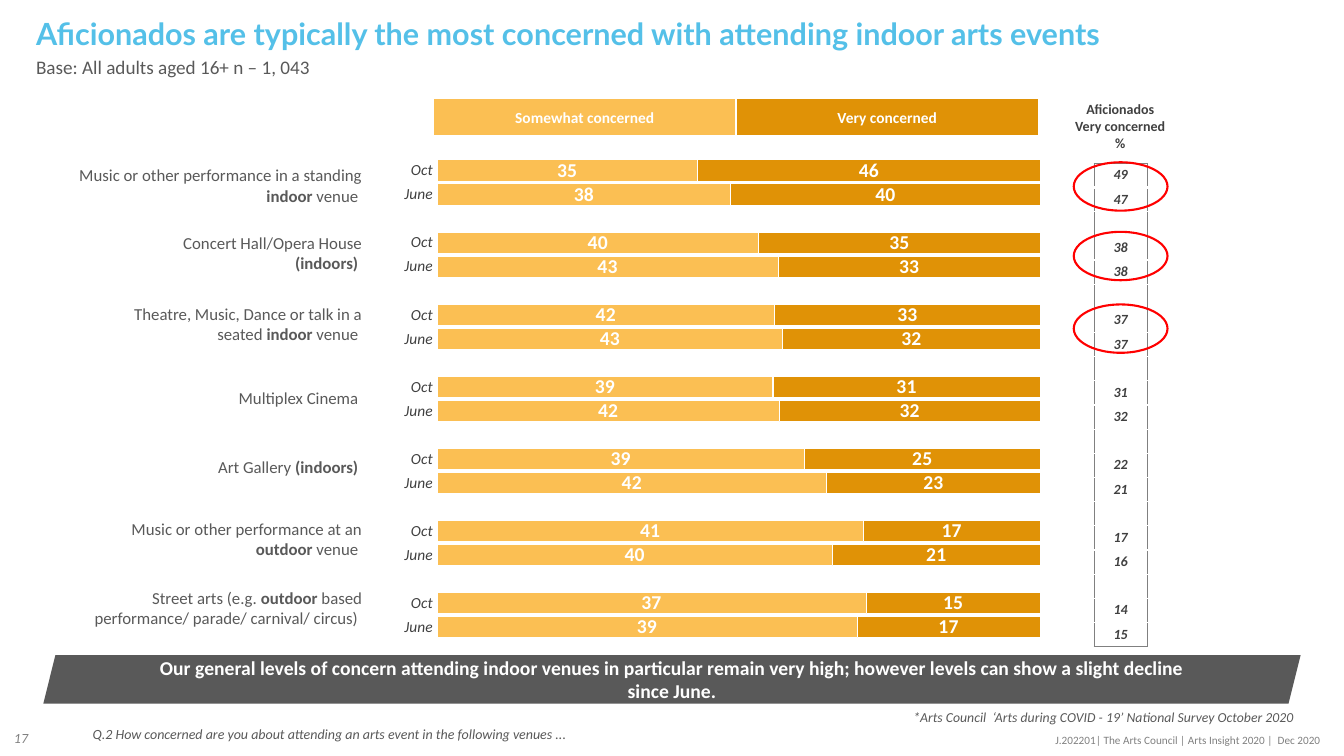
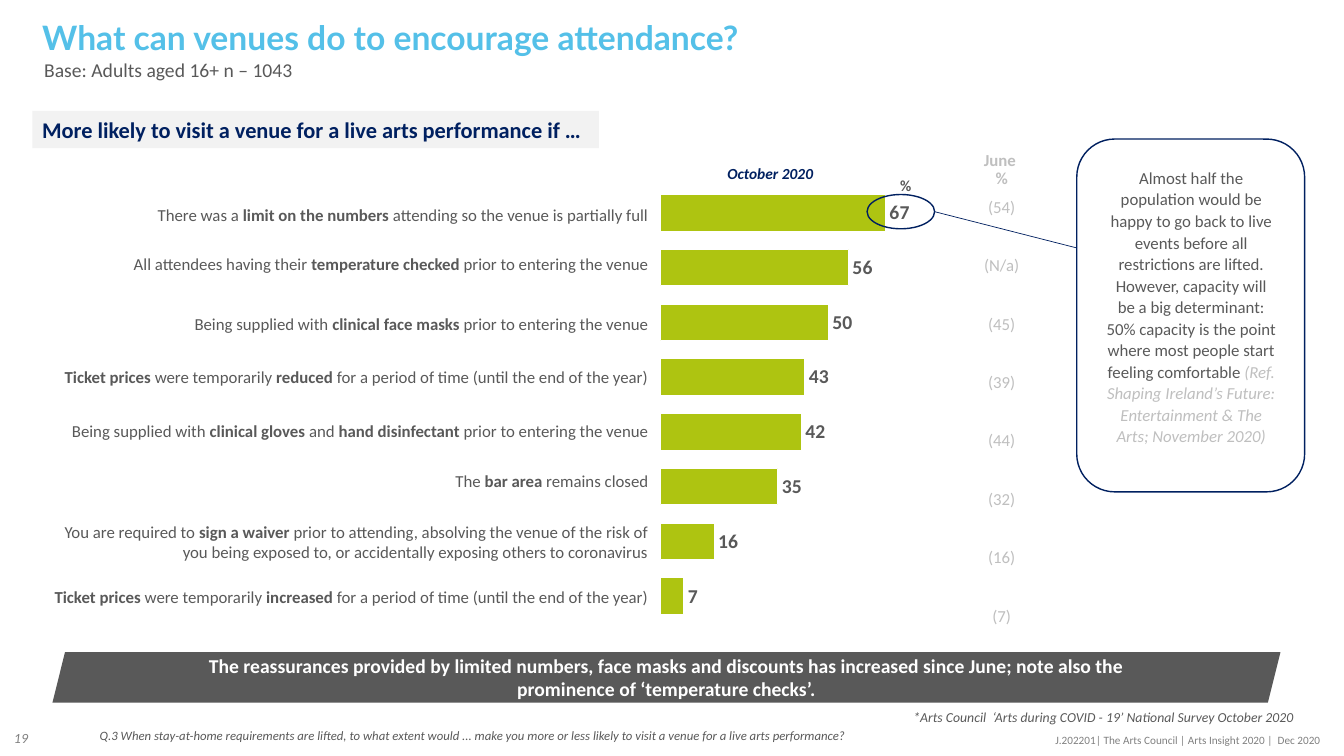
from dataclasses import dataclass

import pptx
import pptx.chart.data
import pptx.dml.color
import pptx.enum.chart
import pptx.enum.shapes
import pptx.enum.text
import pptx.oxml
import pptx.oxml.ns
import pptx.util
from lxml import etree

Inches, Pt = pptx.util.Inches, pptx.util.Pt
RGB = pptx.dml.color.RGBColor.from_string
ALIGN = pptx.enum.text.PP_ALIGN
ANCHOR = pptx.enum.text.MSO_ANCHOR
SHAPE = pptx.enum.shapes.MSO_SHAPE
CHART = pptx.enum.chart
qn = pptx.oxml.ns.qn


@dataclass(frozen=True)
class Theme:
    title_font: str = "Lato"
    body_font: str = "Calibri"
    title: str = "54C0E8"
    body: str = "595959"
    dark: str = "404040"
    muted: str = "808080"
    faint: str = "BFBFBF"
    white: str = "FFFFFF"
    panel: str = "F2F2F2"
    navy: str = "002060"
    red: str = "FF0000"
    light_amber: str = "FBBF53"
    amber: str = "E09206"
    green: str = "AEC411"
    heading_size: float = 16
    strong_size: float = 14
    text_size: float = 12
    label_size: float = 11
    small_size: float = 10
    source_size: float = 9.8
    credit_size: float = 8


THEME = Theme()


def write_text(frame, text, size, color=THEME.body, bold=False, italic=False, align=ALIGN.LEFT,
               spacing=None, font=THEME.body_font, marked_color=None, marked_italic=False):
    """Write one paragraph per line; parts between ** are bold, or take the marked colour and italics."""
    for number, line in enumerate(text.split("\n")):
        paragraph = frame.paragraphs[0] if number == 0 else frame.add_paragraph()
        paragraph.alignment = align
        if spacing:
            paragraph.line_spacing = spacing
        for position, part in enumerate(line.split("**")):
            if not part:
                continue
            marked = position % 2 == 1
            run = paragraph.add_run()
            run.text = part
            run.font.name = font
            run.font.size = Pt(size)
            run.font.bold = bold or (marked and not marked_color)
            run.font.italic = italic or (marked and marked_italic)
            run.font.color.rgb = RGB(marked_color if marked and marked_color else color)
        if not line:
            etree.SubElement(paragraph._p, qn("a:endParaRPr"), sz=str(int(size * 100)))


def add_box(slide, box, text="", size=THEME.text_size, geometry=None, fill=None, line=None,
            line_width=1, anchor=ANCHOR.TOP, inset=None, **style):
    """Add a text box, or a preset shape when a geometry is given."""
    place = [Inches(length) for length in box]
    if geometry is None:
        shape = slide.shapes.add_textbox(*place)
    else:
        shape = slide.shapes.add_shape(geometry, *place)
        shape.shadow.inherit = False
        if fill:
            shape.fill.solid()
            shape.fill.fore_color.rgb = RGB(fill)
        else:
            shape.fill.background()
        if line:
            shape.line.color.rgb = RGB(line)
            shape.line.width = Pt(line_width)
        else:
            shape.line.fill.background()
    frame = shape.text_frame
    frame.word_wrap = True
    frame.vertical_anchor = anchor
    if inset is not None:
        frame.margin_left = frame.margin_top = frame.margin_right = frame.margin_bottom = Inches(inset)
    if text:
        write_text(frame, text, size, **style)


presentation = pptx.Presentation()
presentation.slide_width, presentation.slide_height = Inches(13.33), Inches(7.5)

# Titles, bands and footers
pages = [
    dict(number="17",
         title="Aficionados are typically the most concerned with attending indoor arts events",
         title_box=(0.26, 0.14, 11.58, 0.41), title_size=21.8,
         base="Base: All adults aged 16+ n – 1, 043", base_box=(0.26, 0.53, 5.94, 0.35), base_size=13.7,
         question="Q.2 How concerned are you about attending an arts event in the following venues ...",
         question_box=(0.82, 7.17, 5.97, 0.31), question_size=10,
         band="Our general levels of concern attending indoor venues in particular remain very high; "
              "however levels can show a slight decline since June.",
         band_box=(0.43, 6.5, 12.47, 0.48)),
    dict(number="19",
         title="What can venues do to encourage attendance?",
         title_box=(0.32, 0.16, 8.51, 0.41), title_size=24,
         base="Base: Adults aged 16+ n – 1043", base_box=(0.34, 0.55, 5.94, 0.35), base_size=14,
         question="Q.3 When stay-at-home requirements are lifted, to what extent would ... "
                  "make you more or less likely to visit a venue for a live arts performance?",
         question_box=(0.89, 7.19, 7.71, 0.27), question_size=9.1,
         band="The reassurances provided by limited numbers, face masks and discounts has increased "
              "since June; note also the prominence of ‘temperature checks’.",
         band_box=(0.52, 6.47, 12.18, 0.5)),
]
for page in pages:
    slide = presentation.slides.add_slide(presentation.slide_layouts[6])
    add_box(slide, (0.04, 7.12, 0.58, 0.4), page["number"], THEME.small_size, color=THEME.muted,
            italic=True, anchor=ANCHOR.MIDDLE)
    add_box(slide, (10.3, 7.23, 2.9, 0.37), "J.202201| The Arts Council | Arts Insight 2020 |  Dec 2020",
            THEME.credit_size, color=THEME.muted, align=ALIGN.RIGHT)
    add_box(slide, page["title_box"], page["title"], page["title_size"], color=THEME.title, bold=True,
            font=THEME.title_font, spacing=0.9)
    add_box(slide, page["base_box"], page["base"], page["base_size"], spacing=0.9)
    add_box(slide, page["question_box"], page["question"], page["question_size"], italic=True, spacing=0.9)
    add_box(slide, page["band_box"], page["band"], THEME.strong_size, geometry=SHAPE.PARALLELOGRAM,
            fill=THEME.body, color=THEME.white, bold=True, align=ALIGN.CENTER, anchor=ANCHOR.MIDDLE, inset=0)
    add_box(slide, (8.96, 7, 4.17, 0.2),
            "*Arts Council  ‘Arts during COVID - 19’ National Survey October 2020",
            THEME.source_size, italic=True, spacing=0.9)
concern_slide, venue_slide = presentation.slides

# Charts
charts = [
    dict(slide=concern_slide, box=(3.81, 1.47, 6.64, 4.97), layout=(0.079, 0.021, 0.901, 0.959),
         kind=CHART.XL_CHART_TYPE.BAR_STACKED_100, gap=12, overlap=100, maximum=None,
         categories=(["Oct", "June", ""] * 7)[:-1], show_categories=True,
         label_color=THEME.white, label_position=CHART.XL_LABEL_POSITION.CENTER,
         series=[(THEME.light_amber, [35, 38, None, 40, 43, None, 42, 43, None, 39, 42, None,
                                      39, 42, None, 41, 40, None, 37, 39]),
                 (THEME.amber, [46, 40, None, 35, 33, None, 33, 32, None, 31, 32, None,
                                25, 23, None, 17, 21, None, 15, 17])]),
    dict(slide=venue_slide, box=(4.86, 1.6, 4.41, 4.62), layout=(0.383, 0.052, 0.605, 0.941),
         kind=CHART.XL_CHART_TYPE.BAR_CLUSTERED, gap=50, overlap=0, maximum=80,
         categories=[str(number) for number in range(1, 9)], show_categories=False,
         label_color=THEME.body, label_position=CHART.XL_LABEL_POSITION.OUTSIDE_END,
         series=[(THEME.green, [67, 56, 50, 43, 42, 35, 16, 7])]),
]
for item in charts:
    data = pptx.chart.data.CategoryChartData(number_format="0")
    data.categories = item["categories"]
    for number, (color, values) in enumerate(item["series"], 1):
        data.add_series(f"Series {number}", values)
    chart = item["slide"].shapes.add_chart(
        item["kind"], *[Inches(length) for length in item["box"]], data).chart
    chart.has_title = chart.has_legend = False
    chart.font.name = THEME.body_font
    chart.font.size = Pt(THEME.label_size)
    chart.font.color.rgb = RGB(THEME.dark)

    category_axis, value_axis = chart.category_axis, chart.value_axis
    category_axis.reverse_order = True
    category_axis.visible = item["show_categories"]
    category_axis.major_tick_mark = CHART.XL_TICK_MARK.NONE
    category_axis.format.line.fill.background()
    category_axis.tick_labels.font.italic = True
    value_axis.visible = value_axis.has_major_gridlines = False
    value_axis.minimum_scale = 0
    if item["maximum"]:
        value_axis.maximum_scale = item["maximum"]

    plot = chart.plots[0]
    plot.gap_width, plot.overlap = item["gap"], item["overlap"]
    plot.vary_by_categories = False
    for series, (color, values) in zip(plot.series, item["series"]):
        series.format.fill.solid()
        series.format.fill.fore_color.rgb = RGB(color)
        series.format.line.color.rgb = RGB(THEME.white)
        series.format.line.width = Pt(0.75)
        labels = series.data_labels
        labels.show_value = True
        labels.number_format, labels.number_format_is_linked = "0", False
        labels.position = item["label_position"]
        labels.font.name = THEME.body_font
        labels.font.size = Pt(THEME.strong_size)
        labels.font.bold = True
        labels.font.color.rgb = RGB(item["label_color"])

    plot_area = chart._chartSpace.chart.plotArea
    for old_layout in plot_area.findall(qn("c:layout")):
        plot_area.remove(old_layout)
    layout = etree.Element(qn("c:layout"))
    manual = etree.SubElement(layout, qn("c:manualLayout"))
    settings = [("layoutTarget", "inner"), ("xMode", "edge"), ("yMode", "edge"),
                *zip("xywh", item["layout"])]
    for name, value in settings:
        etree.SubElement(manual, qn(f"c:{name}"), val=str(value))
    plot_area.insert(0, layout)

# Tables
white_edge, gray_edge = (THEME.white, 1), (THEME.muted, 0.5)
june_shares = ["(54)", "(N/a)", "(45)", "(39)", "(44)", "(32)", "(16)", "(7)"]
aficionado_pairs = [(49, 47), (38, 38), (37, 37), (31, 32), (22, 21), (17, 16), (14, 15)]
aficionado_rows = "||".join(f"{october}|{june}" for october, june in aficionado_pairs).split("|")
measures = [
    "There was a **limit on the numbers **attending so the venue is partially full",
    "All attendees having their **temperature checked **prior to entering the venue",
    "Being supplied with **clinical face masks **prior to entering the venue",
    "**Ticket prices **were temporarily **reduced** for a period of time (until the end of the year)",
    "Being supplied with **clinical gloves **and **hand disinfectant** prior to entering the venue",
    "The **bar area **remains closed",
    "You are required to **sign a waiver **prior to attending, absolving the venue of the risk of "
    "you being exposed to, or accidentally exposing others to coronavirus",
    "**Ticket prices **were temporarily **increased** for a period of time (until the end of the year)",
]
centered = dict(align=ALIGN.CENTER)
tables = [
    dict(slide=concern_slide, corner=(4.3, 0.98), columns=[3, 3], heights=[0.37],
         rows=[["Somewhat concerned", "Very concerned"]], fills=[THEME.light_amber, THEME.amber],
         edge=white_edge, size=THEME.label_size, style=dict(centered, color=THEME.white, bold=True)),
    dict(slide=concern_slide, corner=(10.85, 1.62), columns=[0.53], heights=[0.24] * 20,
         rows=[[value] for value in aficionado_rows], edge=gray_edge, size=THEME.small_size,
         style=dict(centered, color=THEME.dark, bold=True, italic=True, spacing=0.8)),
    dict(slide=venue_slide, corner=(9.53, 1.45), columns=[0.81], heights=[0.46] + [0.29] * 15,
         rows=[["**June **\n**%**"]] + [[value] for value in "||".join(june_shares).split("|")],
         edge=white_edge, size=THEME.text_size, style=dict(centered, color=THEME.faint, spacing=0.9)),
    dict(slide=venue_slide, corner=(8.67, 1.74), columns=[0.03, 0.51], heights=[0.18],
         rows=[["", "%"]], edge=None, size=THEME.label_size, style=dict(centered, bold=True)),
    dict(slide=venue_slide, corner=(0.5, 2.03), columns=[5.94],
         heights=[0.49, 0.59, 0.53, 0.53, 0.5, 0.5, 0.65, 0.6], rows=[[text] for text in measures],
         edge=None, size=THEME.text_size, anchor=ANCHOR.TOP, style=dict(align=ALIGN.RIGHT)),
]
for item in tables:
    columns, heights, edge = item["columns"], item["heights"], item["edge"]
    place = [Inches(length) for length in (*item["corner"], sum(columns), sum(heights))]
    table = item["slide"].shapes.add_table(len(heights), len(columns), *place).table
    table.first_row = table.horz_banding = False
    for column, width in zip(table.columns, columns):
        column.width = Inches(width)
    for row_number, (row, height) in enumerate(zip(table.rows, heights)):
        row.height = Inches(height)
        first, last = row_number == 0, row_number == len(heights) - 1
        top = edge if first or not edge else white_edge
        bottom = edge if last or not edge else (THEME.white, 3 if first else 1)
        for column_number, cell in enumerate(row.cells):
            cell.margin_left = cell.margin_right = cell.margin_top = Inches(0.01)
            cell.margin_bottom = 0
            cell.vertical_anchor = item.get("anchor", ANCHOR.MIDDLE)
            write_text(cell.text_frame, item["rows"][row_number][column_number], item["size"], **item["style"])
            properties = cell._tc.get_or_add_tcPr()
            for side, border in zip("LRTB", (edge, edge, top, bottom)):
                border_line = etree.SubElement(properties, qn(f"a:ln{side}"))
                if border:
                    border_line.set("w", str(Pt(border[1])))
                    solid = etree.SubElement(border_line, qn("a:solidFill"))
                    etree.SubElement(solid, qn("a:srgbClr"), val=border[0])
                else:
                    etree.SubElement(border_line, qn("a:noFill"))
            if "fills" in item:
                cell.fill.solid()
                cell.fill.fore_color.rgb = RGB(item["fills"][column_number])
            else:
                cell.fill.background()

# Concern slide: venue labels and highlights
venue_labels = [
    (0.43, 1.59, "Music or other performance in a standing **indoor** venue "),
    (1.23, 2.26, "Concert Hall/Opera House **(indoors) **"),
    (0.99, 2.96, "Theatre, Music, Dance or talk in a seated **indoor** venue "),
    (0.87, 3.8, "Multiplex Cinema "),
    (1.11, 4.48, "Art Gallery **(indoors) **"),
    (0.99, 5.1, "Music or other performance at an **outdoor** venue "),
    (0.75, 5.78, "Street arts (e.g. **outdoor** based performance/ parade/ carnival/ circus) "),
]
for left, top, text in venue_labels:
    add_box(concern_slide, (left, top, 3.69 - left, 0.5), text, align=ALIGN.RIGHT)
add_box(concern_slide, (10.49, 0.95, 1.24, 0.61), "Aficionados\nVery concerned\n%", THEME.small_size,
        color=THEME.dark, bold=True, align=ALIGN.CENTER)
for top in (1.61, 2.3, 3.02):
    add_box(concern_slide, (10.65, top, 0.93, 0.48), geometry=SHAPE.OVAL, line=THEME.red, line_width=1.5)

# Venue slide: headings and callout
add_box(venue_slide, (0.32, 1.1, 5.62, 0.37), "More likely to visit a venue for a live arts performance if …",
        THEME.heading_size, geometry=SHAPE.RECTANGLE, fill=THEME.panel, color=THEME.navy, bold=True)
add_box(venue_slide, (6.79, 1.58, 1.7, 0.28), "October 2020", THEME.label_size, color=THEME.navy,
        bold=True, italic=True, align=ALIGN.CENTER)
add_box(venue_slide, (8.6, 1.93, 0.67, 0.34), geometry=SHAPE.OVAL, line=THEME.navy)
leader = venue_slide.shapes.add_connector(
    pptx.enum.shapes.MSO_CONNECTOR.STRAIGHT, Inches(9.27), Inches(2.1), Inches(10.68), Inches(2.46))
leader.line.color.rgb = RGB(THEME.navy)
leader.line.width = Pt(0.5)
etree.SubElement(leader._element.spPr, qn("a:effectLst"))
add_box(venue_slide, (10.68, 1.38, 2.26, 3.5), geometry=SHAPE.ROUNDED_RECTANGLE, line=THEME.navy)
add_box(venue_slide, (10.87, 1.6, 1.89, 2.9),
        "Almost half the population would be happy to go back to live events before all restrictions "
        "are lifted. However, capacity will be a big determinant: 50% capacity is the point where most "
        "people start feeling comfortable **(Ref. Shaping Ireland’s Future: Entertainment & The Arts; "
        "November 2020)**",
        align=ALIGN.CENTER, spacing=1.07, marked_color=THEME.faint, marked_italic=True)

presentation.save("out.pptx")
